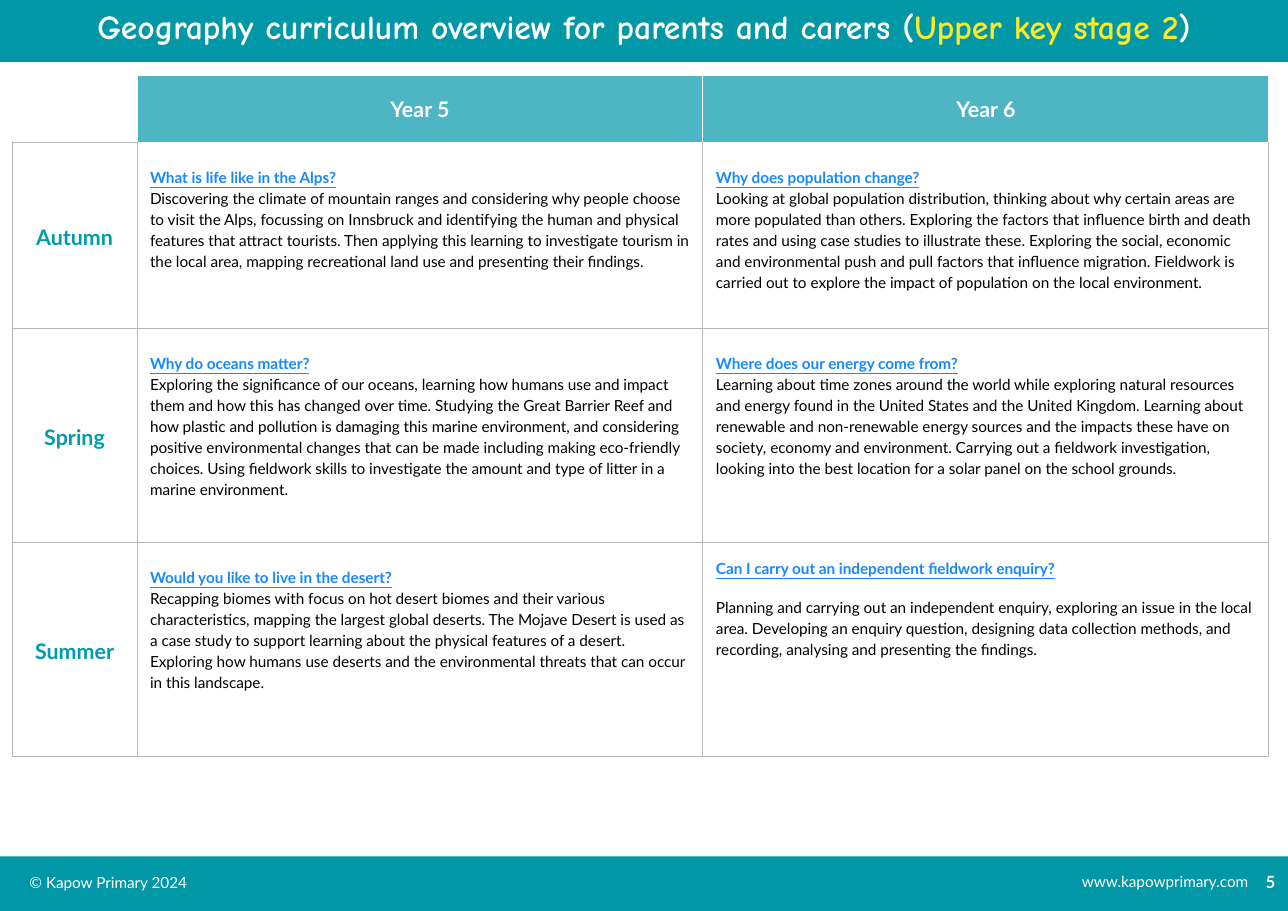
"""Build the upper key stage 2 geography curriculum overview slide."""
from pptx import Presentation
from pptx.dml.color import RGBColor
from pptx.enum.shapes import MSO_SHAPE
from pptx.enum.text import MSO_ANCHOR, MSO_AUTO_SIZE, PP_ALIGN
from pptx.oxml import parse_xml
from pptx.oxml.ns import nsdecls
from pptx.util import Cm, Pt

TEAL, HEADER, TERM, LINK = "0097A7", "4EB5C5", "009BAF", "1789FC"
WHITE, BLACK, GREY, YELLOW = "FFFFFF", "000000", "B7B7B7", "FAEA2A"

TITLE = [
    ("Geography curriculum overview for parents and carers (", WHITE),
    ("Upper key stage 2", YELLOW),
    (")", WHITE),
]
YEARS = ["Year 5", "Year 6"]
TERMS = [
    ("Autumn", [
        ("What is life like in the Alps?",
         "Discovering the climate of mountain ranges and considering why people choose to visit the Alps, "
         "focussing on Innsbruck and identifying the human and physical features that attract tourists. "
         "Then applying this learning to investigate tourism in the local area, mapping recreational land "
         "use and presenting their findings."),
        ("Why does population change?",
         "Looking at global population distribution, thinking about why certain areas are more populated "
         "than others. Exploring the factors that influence birth and death rates and using case studies to "
         "illustrate these. Exploring the social, economic and environmental push and pull factors that "
         "influence migration. Fieldwork is carried out to explore the impact of population on the local "
         "environment."),
    ]),
    ("Spring", [
        ("Why do oceans matter?",
         "Exploring the significance of our oceans, learning how humans use and impact them and how this "
         "has changed over time. Studying the Great Barrier Reef and how plastic and pollution is damaging "
         "this marine environment, and considering positive environmental changes that can be made including "
         "making eco-friendly choices. Using fieldwork skills to investigate the amount and type of litter "
         "in a marine environment."),
        ("Where does our energy come from?",
         "Learning about time zones around the world while exploring natural resources and energy found in "
         "the United States and the United Kingdom. Learning about renewable and non-renewable energy "
         "sources and the impacts these have on society, economy and environment. Carrying out a fieldwork "
         "investigation, looking into the best location for a solar panel on the school grounds."),
    ]),
    ("Summer", [
        ("Would you like to live in the desert?",
         "Recapping biomes with focus on hot desert biomes and their various characteristics, mapping the "
         "largest global deserts. The Mojave Desert is used as a case study to support learning about the "
         "physical features of a desert. Exploring how humans use deserts and the environmental threats "
         "that can occur in this landscape."),
        ("Can I carry out an independent fieldwork enquiry?",
         "Planning and carrying out an independent enquiry, exploring an issue in the local area. Developing "
         "an enquiry question, designing data collection methods, and recording, analysing and presenting "
         "the findings."),
    ]),
]
SPACED_OUT = "Can I carry out an independent fieldwork enquiry?"

WIDTH, HEIGHT = 29.7, 21
COLS = [2.88, 13.05, 13.05]
ROWS = [1.43, 4.29, 4.93, 4.93]
BANDS = [(0, 1.43), (19.74, 1.26)]
FOOTER = [
    ("© Kapow Primary 2024", (0.43, 19.91, 5, 0.94), 0.25, dict(size=10)),
    ("www.kapowprimary.com", (24.03, 19.89, 5, 0.94), 0.25, dict(size=10, align=PP_ALIGN.RIGHT)),
    ("5", (27.91, 19.86, 1.78, 1.1), 0.28, dict(size=11, bold=True, align=PP_ALIGN.RIGHT)),
]


def rgb(color):
    return RGBColor.from_string(color)


def write(p, text, size=10, color=WHITE, font="Lato", bold=False, underline=False,
          align=PP_ALIGN.LEFT, spacing=None, before=0):
    p.alignment, p.line_spacing, p.space_before = align, spacing, Pt(before)
    r = p.add_run()
    r.text = text
    f = r.font
    f.name, f.size, f.bold, f.underline = font, Pt(size), bold, underline
    f.color.rgb = rgb(color)


def set_margins(box, side, top):
    box.margin_left = box.margin_right = Cm(side)
    box.margin_top = box.margin_bottom = Cm(top)


def set_borders(cell, **colors):
    tcPr = cell._tc.get_or_add_tcPr()
    for side in "LRTB":
        tcPr.append(parse_xml(
            f'<a:ln{side} {nsdecls("a")} w="9525"><a:solidFill>'
            f'<a:srgbClr val="{colors[side]}"/></a:solidFill></a:ln{side}>'))


def style_cell(cell, row, col):
    edges = dict.fromkeys("LRTB", GREY if row else WHITE)
    if row == 1 and col:
        edges["T"] = WHITE
    if row == 0 and col == 0:
        edges["B"] = GREY
    set_borders(cell, **edges)
    cell.fill.solid()
    cell.fill.fore_color.rgb = rgb(WHITE if row or not col else HEADER)
    set_margins(cell, 0.3, 0.38)
    cell.vertical_anchor = MSO_ANCHOR.TOP if row and col else MSO_ANCHOR.MIDDLE


def fill_unit(tf, question, summary):
    spaced = question == SPACED_OUT
    write(tf.paragraphs[0], question, color=LINK, bold=True, underline=True,
          spacing=None if spaced else 1.5)
    write(tf.add_paragraph(), summary, color=BLACK, spacing=1.15, before=12 if spaced else 0)


def add_title(s):
    title = s.shapes.title
    title.left, title.top, title.width, title.height = Cm(0), Cm(-0.08), Cm(WIDTH), Cm(1.5)
    tf = title.text_frame
    tf.auto_size, tf.vertical_anchor = MSO_AUTO_SIZE.NONE, MSO_ANCHOR.TOP
    set_margins(tf, 0.33, 0.33)
    for text, color in TITLE:
        write(tf.paragraphs[0], text, size=22, color=color, font="Comic Neue", bold=True,
              align=PP_ALIGN.CENTER, spacing=0.9)


def add_bands(s):
    for top, height in BANDS:
        band = s.shapes.add_shape(MSO_SHAPE.RECTANGLE, Cm(0), Cm(top), Cm(WIDTH), Cm(height))
        band.shadow.inherit = False
        band.fill.solid()
        band.fill.fore_color.rgb = rgb(TEAL)
        band.line.fill.background()
        s.shapes.title.element.addprevious(band.element)


def add_overview(s):
    table = s.shapes.add_table(len(ROWS), len(COLS), Cm(0.28), Cm(1.75),
                               Cm(sum(COLS)), Cm(sum(ROWS))).table
    for column, width in zip(table.columns, COLS):
        column.width = Cm(width)
    for row, height in zip(table.rows, ROWS):
        row.height = Cm(height)
    for row in range(len(ROWS)):
        for col in range(len(COLS)):
            style_cell(table.cell(row, col), row, col)
    label = dict(size=14, bold=True, align=PP_ALIGN.CENTER)
    for col, year in enumerate(YEARS, 1):
        write(table.cell(0, col).text_frame.paragraphs[0], year, **label)
    for row, (term, units) in enumerate(TERMS, 1):
        write(table.cell(row, 0).text_frame.paragraphs[0], term, color=TERM, spacing=1.15, **label)
        for col, unit in enumerate(units, 1):
            fill_unit(table.cell(row, col).text_frame, *unit)


def add_footer(s):
    for text, box, margin, style in FOOTER:
        tf = s.shapes.add_textbox(*map(Cm, box)).text_frame
        tf.word_wrap = True
        set_margins(tf, margin, margin)
        write(tf.paragraphs[0], text, **style)


def main():
    prs = Presentation()
    prs.slide_width, prs.slide_height = Cm(WIDTH), Cm(HEIGHT)
    s = prs.slides.add_slide(prs.slide_layouts[5])
    add_title(s)
    add_bands(s)
    add_overview(s)
    add_footer(s)
    prs.save("out.pptx")


if __name__ == "__main__":
    main()
